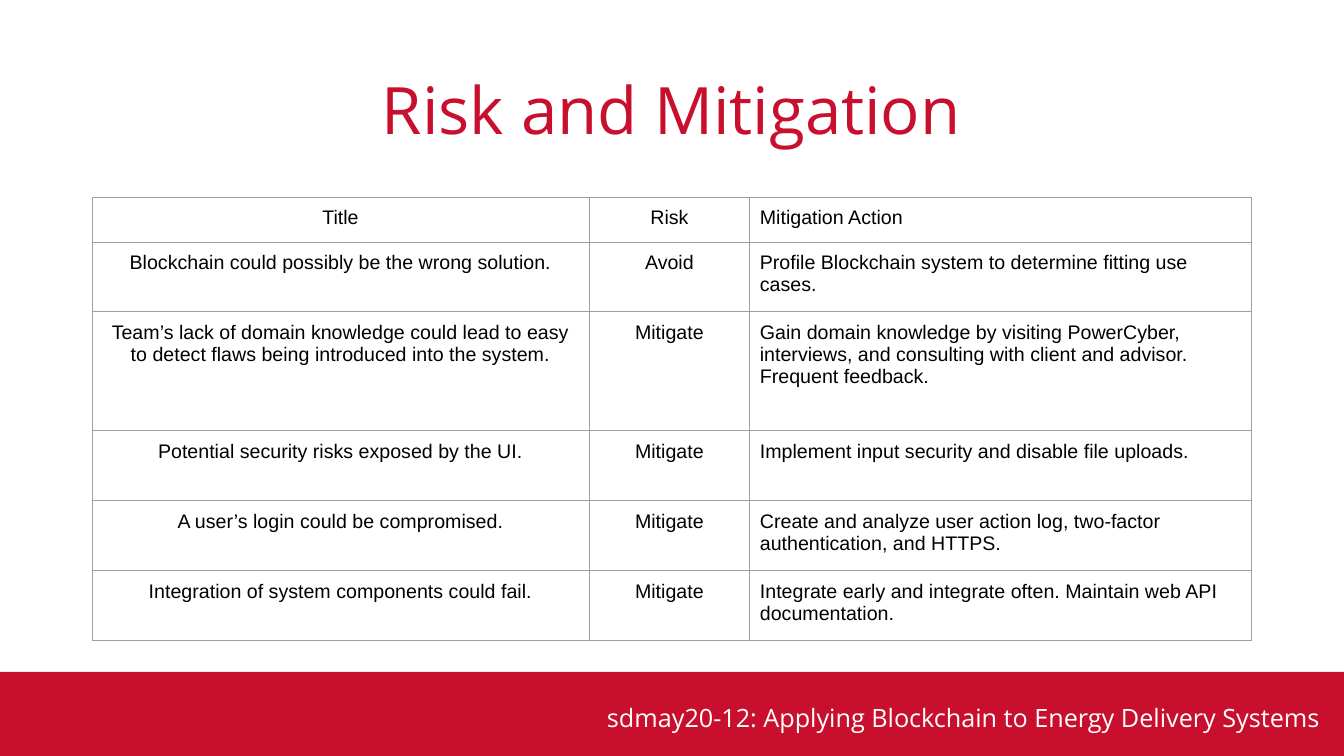
from dataclasses import dataclass

from lxml.etree import SubElement
from pptx import Presentation
from pptx.dml.color import RGBColor
from pptx.enum.shapes import MSO_SHAPE
from pptx.enum.text import MSO_ANCHOR, PP_ALIGN
from pptx.oxml.ns import qn
from pptx.util import Emu, Pt

TITLE = "Risk and Mitigation"
FOOTER = "sdmay20-12: Applying Blockchain to Energy Delivery Systems"
RISKS = [
    ("Title", "Risk", "Mitigation Action"),
    ("Blockchain could possibly be the wrong solution.", "Avoid",
     "Profile Blockchain system to determine fitting use cases."),
    ("Team’s lack of domain knowledge could lead to easy to detect flaws being introduced into the system.",
     "Mitigate",
     "Gain domain knowledge by visiting PowerCyber, interviews, and consulting with client and advisor. "
     "Frequent feedback."),
    ("Potential security risks exposed by the UI.", "Mitigate",
     "Implement input security and disable file uploads."),
    ("A user’s login could be compromised.", "Mitigate",
     "Create and analyze user action log, two-factor authentication, and HTTPS."),
    ("Integration of system components could fail.", "Mitigate",
     "Integrate early and integrate often. Maintain web API documentation."),
]
COLUMN_WIDTHS = [497, 161, 502]
COLUMN_ALIGNMENTS = [PP_ALIGN.CENTER, PP_ALIGN.CENTER, PP_ALIGN.LEFT]
ROW_HEIGHTS = [45, 70, 119, 70, 70, 70]

SLIDE_WIDTH, SLIDE_HEIGHT = 1344, 756
BAND_HEIGHT = 84
TITLE_BOX = (372, 47, 601, 132)
FOOTER_BOX = (597, 692, 735, 44)
TABLE_LEFT, TABLE_TOP = 92, 197
MARGIN = 10


@dataclass(frozen=True)
class Theme:
    red: str = "C8102E"
    white: str = "FFFFFF"
    black: str = "000000"
    border: str = "9E9E9E"
    border_width: float = 0.75
    heading_font: str = "Open Sans"
    table_font: str = "Arial"
    title_size: float = 46.7
    footer_size: float = 18
    table_size: float = 14


THEME = Theme()


def px(length):
    return Emu(round(length * 914400 / 100.8))


def style(paragraph, name, size, color):
    font = paragraph.font
    font.name, font.size = name, Pt(size)
    font.color.rgb = RGBColor.from_string(color)


def set_margins(target, horizontal, vertical):
    target.margin_left = target.margin_right = px(horizontal)
    target.margin_top = target.margin_bottom = px(vertical)


def add_text(slide, box, text, size, color, vertical_margin):
    frame = slide.shapes.add_textbox(*map(px, box)).text_frame
    frame.word_wrap = True
    set_margins(frame, MARGIN, vertical_margin)
    frame.text = text
    style(frame.paragraphs[0], THEME.heading_font, size, color)
    return frame


def add_band(slide):
    top = SLIDE_HEIGHT - BAND_HEIGHT
    band = slide.shapes.add_shape(
        MSO_SHAPE.RECTANGLE, 0, px(top), px(SLIDE_WIDTH), px(BAND_HEIGHT))
    band.shadow.inherit = False
    band.fill.solid()
    band.fill.fore_color.rgb = RGBColor.from_string(THEME.red)
    band.line.fill.background()


def add_borders(cell):
    properties = cell._tc.get_or_add_tcPr()
    for side in ("lnL", "lnR", "lnT", "lnB"):
        line = SubElement(properties, qn(f"a:{side}"), w=str(Pt(THEME.border_width)))
        fill = SubElement(line, qn("a:solidFill"))
        SubElement(fill, qn("a:srgbClr"), val=THEME.border)


def add_risk_table(slide):
    table = slide.shapes.add_table(
        len(RISKS), len(COLUMN_WIDTHS), px(TABLE_LEFT), px(TABLE_TOP),
        px(sum(COLUMN_WIDTHS)), px(sum(ROW_HEIGHTS))).table
    table.first_row = table.horz_banding = False
    for column, width in zip(table.columns, COLUMN_WIDTHS):
        column.width = px(width)
    for row, height, texts in zip(table.rows, ROW_HEIGHTS, RISKS):
        row.height = px(height)
        for cell, text, alignment in zip(row.cells, texts, COLUMN_ALIGNMENTS):
            cell.text = text
            set_margins(cell, MARGIN, MARGIN)
            add_borders(cell)
            cell.fill.background()
            paragraph = cell.text_frame.paragraphs[0]
            paragraph.alignment = alignment
            style(paragraph, THEME.table_font, THEME.table_size, THEME.black)


def main():
    presentation = Presentation()
    presentation.slide_width = px(SLIDE_WIDTH)
    presentation.slide_height = px(SLIDE_HEIGHT)
    slide = presentation.slides.add_slide(presentation.slide_layouts[6])
    add_band(slide)
    title = add_text(slide, TITLE_BOX, TITLE, THEME.title_size, THEME.red, MARGIN // 2)
    title.vertical_anchor = MSO_ANCHOR.MIDDLE
    title.paragraphs[0].line_spacing = 0.9
    add_text(slide, FOOTER_BOX, FOOTER, THEME.footer_size, THEME.white, MARGIN)
    add_risk_table(slide)
    presentation.save("out.pptx")


if __name__ == "__main__":
    main()
